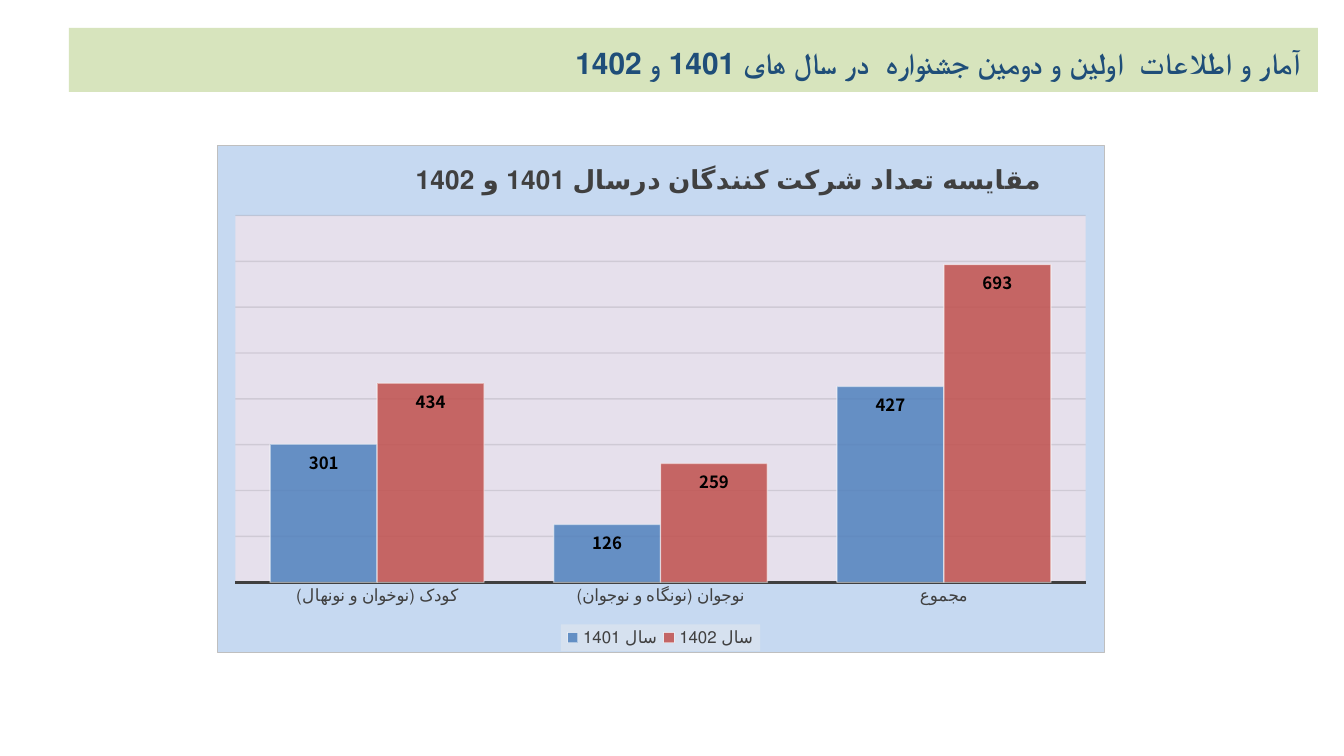
import dataclasses

import lxml.etree
import pptx
import pptx.chart.data
import pptx.dml.color
import pptx.enum.chart
import pptx.enum.shapes
import pptx.enum.text
import pptx.oxml
import pptx.oxml.ns
import pptx.util

EMU_PER_PX = 914400 / 134.4
CHART_FONT = "Noto Sans CJK KR"
DARK_GREY = "404040"
qn = pptx.oxml.ns.qn


@dataclasses.dataclass(frozen=True)
class Box:
    left: int
    top: int
    width: int
    height: int

    def emu(self) -> list[int]:
        return [px(n) for n in (self.left, self.top, self.width, self.height)]


@dataclasses.dataclass(frozen=True)
class Year:
    name: str
    counts: tuple[int, ...]
    color: str


HEADING = Box(69, 28, 1249, 64)
CHART = Box(217, 145, 888, 508)
PLOT = Box(235, 215, 852, 368)
LEGEND = Box(561, 625, 200, 27)
CHART_TITLE = Box(411, 160, 624, 32)
AGE_GROUPS = ("کودک (نوخوان و نونهال)", "نوجوان (نونگاه و نوجوان)", "مجموع")
YEARS = (
    Year("سال 1401", (301, 126, 427), "4F81BD"),
    Year("سال 1402", (434, 259, 693), "C0504D"),
)


def px(length: int) -> int:
    return round(length * EMU_PER_PX)


def rgb(color: str) -> pptx.dml.color.RGBColor:
    return pptx.dml.color.RGBColor.from_string(color)


def style_font(font, *, size: float, color: str, name: str = CHART_FONT, bold: bool = False) -> None:
    font.size = pptx.util.Pt(size)
    font.name = name
    font.bold = bold
    font.color.rgb = rgb(color)


def write_text(frame, text: str, *, align=None, spacing: float | None = None, **font_format) -> None:
    paragraph = frame.paragraphs[0]
    paragraph.alignment = align
    paragraph.line_spacing = spacing
    paragraph._p.get_or_add_pPr().set("rtl", "1")
    run = paragraph.add_run()
    run.text = text
    style_font(run.font, **font_format)


def style_line(line, color: str, width: float) -> None:
    line.color.rgb = rgb(color)
    line.width = pptx.util.Pt(width)


def set_opacity(element, *percents: int) -> None:
    for color, percent in zip(element.iter(qn("a:srgbClr")), percents):
        lxml.etree.SubElement(color, qn("a:alpha")).set("val", str(percent * 1000))


def area_format(fill: str, border: str | None = None):
    namespaces = pptx.oxml.ns.nsdecls("c", "a")
    outline = f'<a:solidFill><a:srgbClr val="{border}"/></a:solidFill>' if border else "<a:noFill/>"
    return pptx.oxml.parse_xml(
        f'<c:spPr {namespaces}><a:solidFill><a:srgbClr val="{fill}"/></a:solidFill>'
        f'<a:ln w="9525">{outline}</a:ln></c:spPr>'
    )


def place(element, box: Box, index: int, *, inner: bool = False, sized: bool = True) -> None:
    for old in element.findall(qn("c:layout")):
        element.remove(old)
    layout = lxml.etree.Element(qn("c:layout"))
    manual = lxml.etree.SubElement(layout, qn("c:manualLayout"))
    settings = {"layoutTarget": "inner"} if inner else {}
    settings |= {"xMode": "edge", "yMode": "edge"}
    settings["x"] = round((box.left - CHART.left) / CHART.width, 3)
    settings["y"] = round((box.top - CHART.top) / CHART.height, 3)
    if sized:
        settings["w"] = round(box.width / CHART.width, 3)
        settings["h"] = round(box.height / CHART.height, 3)
    for tag, value in settings.items():
        lxml.etree.SubElement(manual, qn(f"c:{tag}")).set("val", str(value))
    element.insert(index, layout)


def add_heading(slide, text: str) -> None:
    heading = slide.shapes.add_shape(pptx.enum.shapes.MSO_SHAPE.RECTANGLE, *HEADING.emu())
    heading.shadow.inherit = False
    heading.fill.solid()
    heading.fill.fore_color.rgb = rgb("D7E4BD")
    heading.line.fill.background()
    frame = heading.text_frame
    frame.word_wrap = True
    frame.margin_right = px(18)
    frame.vertical_anchor = pptx.enum.text.MSO_ANCHOR.MIDDLE
    write_text(frame, text, align=pptx.enum.text.PP_ALIGN.RIGHT, spacing=1.15,
               size=16, color="1F4E79", name="Calibri", bold=True)


def style_year(series, year: Year) -> None:
    series.format.fill.solid()
    series.format.fill.fore_color.rgb = rgb(year.color)
    style_line(series.format.line, "FFFFFF", 0.75)
    set_opacity(series._element.find(qn("c:spPr")), 85, 50)
    labels = series.data_labels
    labels.show_value = True
    labels.position = pptx.enum.chart.XL_LABEL_POSITION.INSIDE_END
    style_font(labels.font, size=9, color="000000", bold=True)


def style_axes(chart) -> None:
    groups = chart.category_axis
    groups.major_tick_mark = pptx.enum.chart.XL_TICK_MARK.NONE
    style_line(groups.format.line, DARK_GREY, 1.5)
    style_font(groups.tick_labels.font, size=9, color=DARK_GREY)
    counts = chart.value_axis
    counts.minimum_scale, counts.maximum_scale, counts.major_unit = 0, 800, 100
    style_line(counts.major_gridlines.format.line, "0D0D0D", 0.75)
    set_opacity(counts._element.find(qn("c:majorGridlines")), 10)
    counts.visible = False


def add_participants_chart(slide, title: str) -> None:
    participants = pptx.chart.data.CategoryChartData()
    participants.categories = AGE_GROUPS
    for year in YEARS:
        participants.add_series(year.name, year.counts)
    chart = slide.shapes.add_chart(
        pptx.enum.chart.XL_CHART_TYPE.COLUMN_CLUSTERED, *CHART.emu(), participants).chart
    style_font(chart.font, size=10, color="000000")

    write_text(chart.chart_title.text_frame, title, size=14, color=DARK_GREY, bold=True)
    chart.chart_title.include_in_layout = False
    place(chart.chart_title._element, CHART_TITLE, 1, sized=False)

    columns = chart.plots[0]
    columns.gap_width = 65
    columns.overlap = 0
    columns.vary_by_categories = False
    for series, year in zip(columns.series, YEARS):
        style_year(series, year)
    style_axes(chart)

    chart.has_legend = True
    legend = chart.legend
    legend.position = pptx.enum.chart.XL_LEGEND_POSITION.BOTTOM
    legend.include_in_layout = False
    style_font(legend.font, size=9, color=DARK_GREY)
    place(legend._element, LEGEND, 1)
    legend._element.find(qn("c:txPr")).addprevious(area_format("D6E1EF"))

    chart_element = chart._chartSpace.find(qn("c:chart"))
    chart_element.addnext(area_format("C6D9F1", "BFBFBF"))
    plot_area = chart_element.find(qn("c:plotArea"))
    place(plot_area, PLOT, 0, inner=True)
    plot_area.append(area_format("E6E0EC"))


def main() -> None:
    deck = pptx.Presentation()
    deck.slide_width, deck.slide_height = px(1344), px(756)
    slide = deck.slides.add_slide(deck.slide_layouts[6])
    add_heading(slide, "آمار و اطلاعات  اولین و دومین جشنواره  در سال های 1401 و 1402")
    add_participants_chart(slide, "مقایسه تعداد شرکت کنندگان درسال 1401 و 1402")
    deck.save("out.pptx")


if __name__ == "__main__":
    main()
